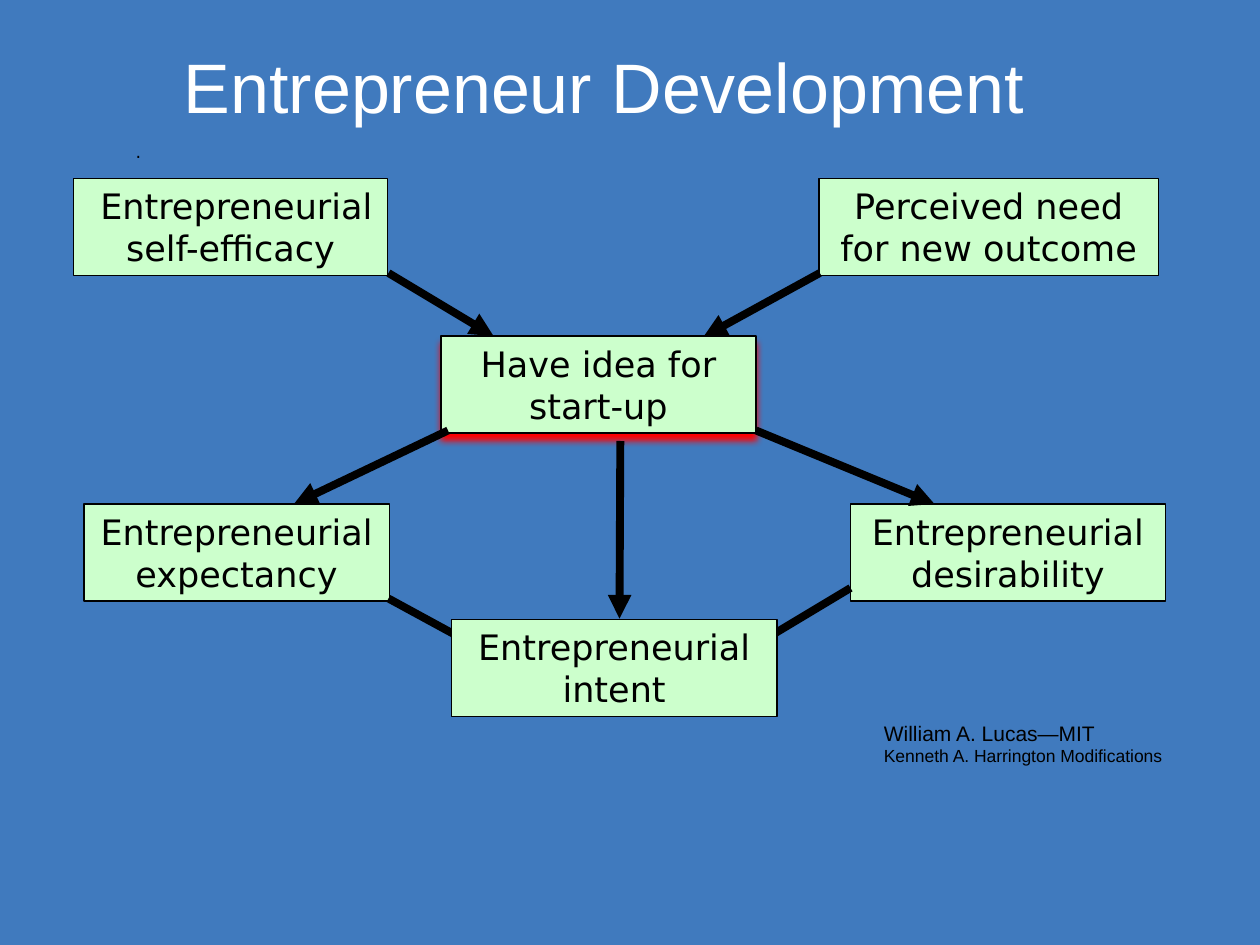
from dataclasses import dataclass

import pptx
import pptx.dml.color
import pptx.enum.shapes
import pptx.enum.text
import pptx.oxml
import pptx.oxml.ns
import pptx.util

Pt = pptx.util.Pt
RGB = pptx.dml.color.RGBColor.from_string
ALIGN = pptx.enum.text.PP_ALIGN
ANCHOR = pptx.enum.text.MSO_ANCHOR


@dataclass(frozen=True)
class Theme:
    background: str = "407ABE"
    box_fill: str = "CCFFCC"
    ink: str = "000000"
    title_color: str = "FFFFFF"
    glow: str = "FF0000"
    heading_font: str = "Arial"
    body_font: str = "DejaVu Sans"
    title_size: float = 40
    box_size: float = 20
    author_size: float = 12
    small_size: float = 10
    outline: float = 0.75
    arrow: float = 4.5


THEME = Theme()
STEP_HEIGHT = 55.5


def add_xml(parent, body):
    parent.append(pptx.oxml.parse_xml(
        body.replace(">", f' {pptx.oxml.ns.nsdecls("a")}>', 1)))


def add_run(paragraph, text, size, font, color=THEME.ink):
    run = paragraph.add_run()
    run.text = text
    run.font.size = Pt(size)
    run.font.name = font
    run.font.color.rgb = RGB(color)


def add_text_frame(slide, box, wrap):
    frame = slide.shapes.add_textbox(*map(Pt, box)).text_frame
    frame.word_wrap = wrap
    return frame


def add_title(slide, box):
    frame = add_text_frame(slide, box, True)
    frame.margin_top = Pt(7)
    heading = frame.paragraphs[0]
    heading.alignment = ALIGN.CENTER
    add_run(heading, "Entrepreneur Development", THEME.title_size,
            THEME.heading_font, THEME.title_color)


def add_dot(slide, box):
    frame = add_text_frame(slide, box, False)
    add_run(frame.paragraphs[0], ".", THEME.small_size, THEME.body_font)


def add_credits(slide, box):
    frame = add_text_frame(slide, box, False)
    add_run(frame.paragraphs[0], "William A. Lucas—MIT",
            THEME.author_size, THEME.heading_font)
    add_run(frame.add_paragraph(), "Kenneth A. Harrington Modifications",
            THEME.small_size, THEME.heading_font)


def add_step(slide, left, top, width, label, indent=0, glow=False):
    step = slide.shapes.add_shape(
        pptx.enum.shapes.MSO_SHAPE.RECTANGLE,
        Pt(left), Pt(top), Pt(width), Pt(STEP_HEIGHT))
    step.fill.solid()
    step.fill.fore_color.rgb = RGB(THEME.box_fill)
    step.line.color.rgb = RGB(THEME.ink)
    step.line.width = Pt(THEME.outline)
    step.shadow.inherit = False
    if glow:
        effects = step._element.spPr.find(pptx.oxml.ns.qn("a:effectLst"))
        add_xml(effects,
                f'<a:outerShdw blurRad="{Pt(4)}" dist="{Pt(4)}" dir="5400000" '
                f'algn="ctr" rotWithShape="0"><a:srgbClr val="{THEME.glow}"/>'
                '</a:outerShdw>')
    frame = step.text_frame
    frame.word_wrap = True
    frame.vertical_anchor = ANCHOR.TOP
    paragraph = frame.paragraphs[0]
    paragraph.alignment = ALIGN.CENTER
    if indent:
        paragraph._p.get_or_add_pPr().set("indent", str(Pt(indent)))
    add_run(paragraph, label, THEME.box_size, THEME.body_font)


def add_arrow(slide, x1, y1, x2, y2):
    arrow = slide.shapes.add_connector(
        pptx.enum.shapes.MSO_CONNECTOR.STRAIGHT, Pt(x1), Pt(y1), Pt(x2), Pt(y2))
    arrow.line.color.rgb = RGB(THEME.ink)
    arrow.line.width = Pt(THEME.arrow)
    add_xml(arrow.line._get_or_add_ln(), '<a:tailEnd type="triangle"></a:tailEnd>')
    add_xml(arrow._element.spPr, "<a:effectLst></a:effectLst>")


def add_flow(slide, left, top):
    """Place the flow of steps, measured from its top left corner."""
    def steps(*rows):
        for x, y, width, label, *style in rows:
            add_step(slide, left + x, top + y, width, label, *style)

    def arrows(*rows):
        for x1, y1, x2, y2 in rows:
            add_arrow(slide, left + x1, top + y1, left + x2, top + y2)

    # Causes and perceptions
    steps((6, 186, 174.5, "Entrepreneurial expectancy"),
          (426, 0, 194, "Perceived need for new outcome"),
          (0, 0, 179.5, "Entrepreneurial self-efficacy", 6.67),
          (444, 186, 180, "Entrepreneurial desirability"))
    # Arrows whose heads run under the later steps
    arrows((444, 234, 384, 270), (180, 240, 241.5, 273.5),
           (426.5, 54, 360, 90.5))
    # Central idea and the arrows around it
    steps((210, 90, 180, "Have idea for start-up", 0, True))
    arrows((390, 144, 492, 186), (312.5, 150, 312, 251.5),
           (180, 54, 240, 90), (214, 144, 126, 186))
    # Result
    steps((216, 252, 186, "Entrepreneurial intent"))


def main():
    deck = pptx.Presentation()
    deck.slide_width, deck.slide_height = Pt(720), Pt(540)
    slide = deck.slides.add_slide(deck.slide_layouts[6])
    slide.background.fill.solid()
    slide.background.fill.fore_color.rgb = RGB(THEME.background)

    add_dot(slide, (70.5, 77, 25, 19))
    add_flow(slide, 42, 102)
    add_credits(slide, (498, 408, 175.5, 34))
    add_title(slide, (24, 18, 642, 90))
    deck.save("out.pptx")


if __name__ == "__main__":
    main()
